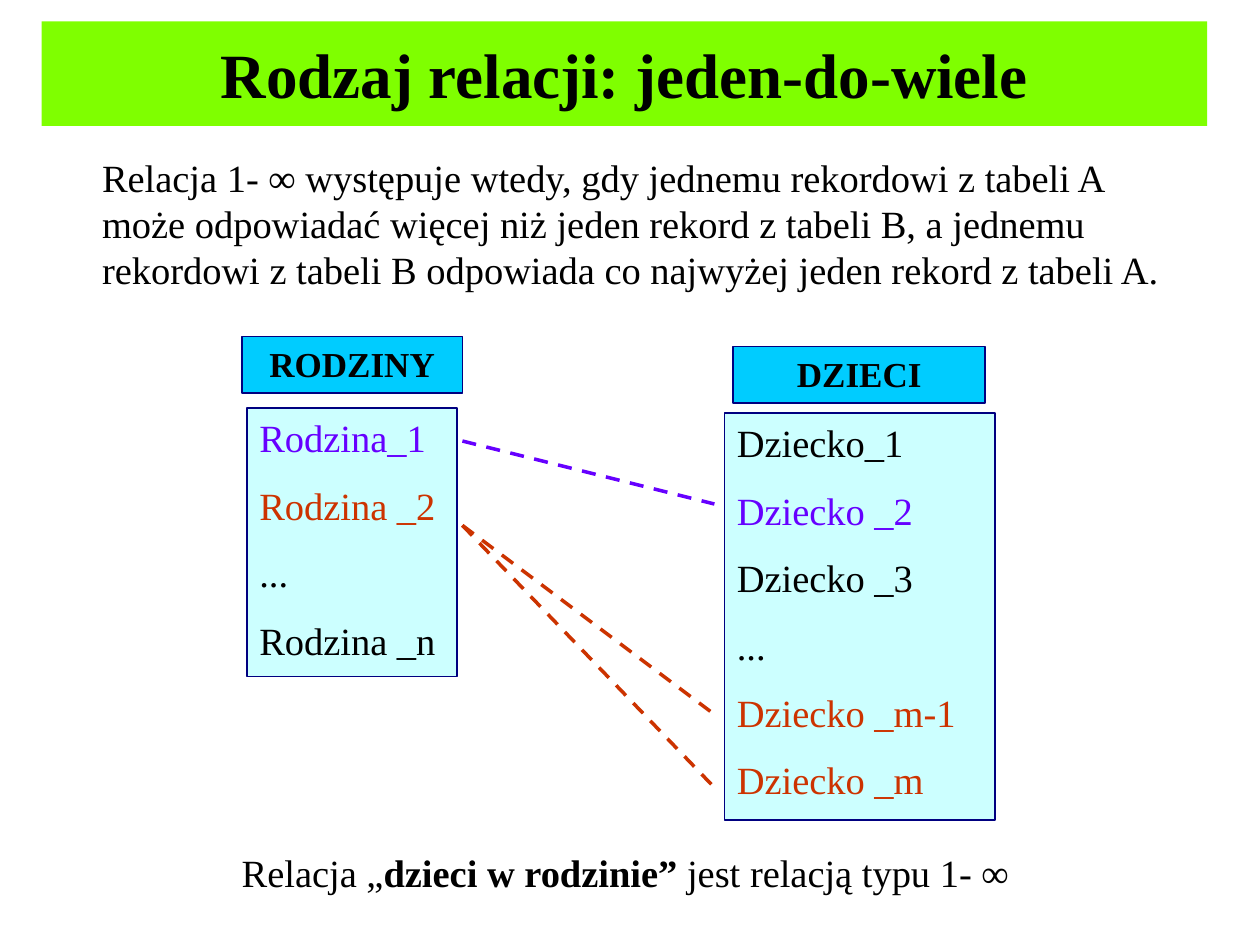
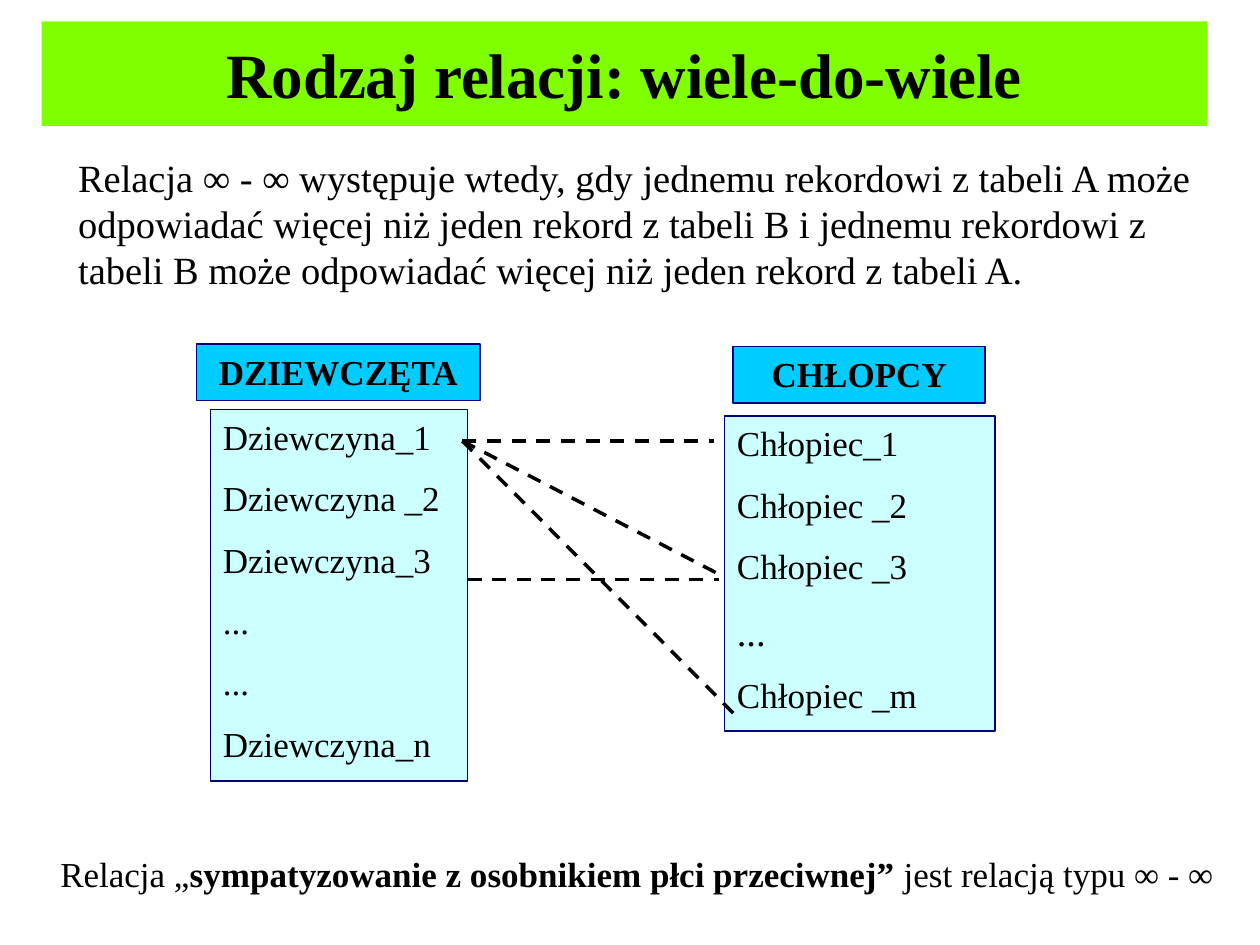
from dataclasses import dataclass
from typing import NamedTuple

from pptx import Presentation
from pptx import util as u
from pptx.dml.color import RGBColor
from pptx.enum import dml, shapes, text
from pptx.oxml import ns, xmlchemy


@dataclass(frozen=True)
class Theme:
    font: str = "Times New Roman"
    ink: str = "000000"
    band: str = "7FFF00"
    header: str = "00CCFF"
    records: str = "CCFFFF"
    border: str = "000080"
    violet: str = "6600FF"
    rust: str = "CC3300"
    title_size: int = 36
    text_size: int = 22
    small_size: int = 20
    record_gap: float = 0.55
    border_width: int = 1
    link_width: int = 2


THEME = Theme()


class Box(NamedTuple):
    left: float
    top: float
    width: float
    height: float


class Record(NamedTuple):
    label: str
    color: str = THEME.ink
    size: int = THEME.text_size


class Entity(NamedTuple):
    name: str
    header_box: Box
    records_box: Box
    records: list[Record]


class Link(NamedTuple):
    start: tuple[float, float]
    end: tuple[float, float]
    color: str = THEME.ink


class Caption(NamedTuple):
    box: Box
    relation: str
    kind: str
    size: int


class Relation(NamedTuple):
    title: str
    definition: str
    definition_box: Box
    entities: list[Entity]
    links: list[Link]
    caption: Caption


TITLE_BOX = Box(0.33, 0.17, 9.25, 0.83)
RIGHT_HEADER_BOX = Box(5.82, 2.75, 2, 0.45)
DEFINITION_INDENT = 0.48


def small_records(*labels: str) -> list[Record]:
    return [Record(label, size=THEME.small_size) for label in labels]


RELATIONS = [
    Relation(
        "Rodzaj relacji: jeden-do-wiele",
        "Relacja 1- ∞ występuje wtedy, gdy jednemu rekordowi z tabeli A może "
        "odpowiadać więcej niż jeden rekord z tabeli B, a jednemu rekordowi z "
        "tabeli B odpowiada co najwyżej jeden rekord z tabeli A.",
        Box(0.33, 1.17, 9.25, 1.25),
        [
            Entity("RODZINY", Box(1.92, 2.67, 1.75, 0.45), Box(1.96, 3.24, 1.67, 2.13), [
                Record("Rodzina_1", THEME.violet),
                Record("Rodzina _2", THEME.rust),
                Record("..."),
                Record("Rodzina _n"),
            ]),
            Entity("DZIECI", RIGHT_HEADER_BOX, Box(5.75, 3.28, 2.15, 3.23), [
                Record("Dziecko_1"),
                Record("Dziecko _2", THEME.violet),
                Record("Dziecko _3"),
                Record("..."),
                Record("Dziecko _m-1", THEME.rust),
                Record("Dziecko _m", THEME.rust),
            ]),
        ],
        [
            Link((3.67, 3.5), (5.67, 4), THEME.violet),
            Link((3.67, 4.17), (5.67, 5.67), THEME.rust),
            Link((3.67, 4.17), (5.67, 6.25), THEME.rust),
        ],
        Caption(Box(1.82, 6.69, 6.31, 0.47), "dzieci w rodzinie”", "1- ∞", THEME.text_size),
    ),
    Relation(
        "Rodzaj relacji: wiele-do-wiele",
        "Relacja ∞ - ∞ występuje wtedy, gdy jednemu rekordowi z tabeli A może "
        "odpowiadać więcej niż jeden rekord z tabeli B i jednemu rekordowi z "
        "tabeli B może odpowiadać więcej niż jeden rekord z tabeli A.",
        Box(0.14, 1.17, 9.75, 1.25),
        [
            Entity("DZIEWCZĘTA", Box(1.56, 2.73, 2.25, 0.45), Box(1.67, 3.25, 2.04, 2.95),
                   small_records("Dziewczyna_1", "Dziewczyna _2", "Dziewczyna_3",
                                 "...", "...", "Dziewczyna_n")),
            Entity("CHŁOPCY", RIGHT_HEADER_BOX, Box(5.75, 3.3, 2.15, 2.5), [
                *small_records("Chłopiec_1", "Chłopiec _2", "Chłopiec _3"),
                Record("..."),
                *small_records("Chłopiec _m"),
            ]),
        ],
        [
            Link((3.67, 3.5), (5.75, 4.58)),
            Link((3.67, 3.5), (5.83, 5.67)),
            Link((3.67, 3.5), (5.67, 3.5)),
            Link((3.71, 4.6), (5.71, 4.6)),
        ],
        Caption(Box(0.38, 6.72, 9.41, 0.44), "sympatyzowanie z osobnikiem płci przeciwnej”",
                "∞ - ∞", THEME.small_size),
    ),
]


def inches(lengths: tuple[float, ...]) -> list[u.Length]:
    return [u.Inches(length) for length in lengths]


def style(paragraph, size: int, color: str = THEME.ink, bold: bool = False) -> None:
    font = paragraph.font
    font.name = THEME.font
    font.size = u.Pt(size)
    font.bold = bold
    font.color.rgb = RGBColor.from_string(color)


def draw_title(slide, title: str) -> None:
    band = slide.shapes.title
    band.left, band.top, band.width, band.height = inches(TITLE_BOX)
    band.fill.solid()
    band.fill.fore_color.rgb = RGBColor.from_string(THEME.band)
    frame = band.text_frame
    frame.text = title
    frame.auto_size = text.MSO_AUTO_SIZE.NONE
    frame.vertical_anchor = text.MSO_ANCHOR.MIDDLE
    heading = frame.paragraphs[0]
    heading.alignment = text.PP_ALIGN.CENTER
    style(heading, THEME.title_size, bold=True)


def draw_definition(slide, relation: Relation) -> None:
    frame = slide.shapes.add_textbox(*inches(relation.definition_box)).text_frame
    frame.word_wrap = True
    frame.margin_left = u.Inches(DEFINITION_INDENT)
    frame.text = relation.definition
    style(frame.paragraphs[0], THEME.text_size)


def draw_panel(slide, box: Box, fill: str):
    panel = slide.shapes.add_shape(shapes.MSO_SHAPE.RECTANGLE, *inches(box))
    panel.shadow.inherit = False
    panel.fill.solid()
    panel.fill.fore_color.rgb = RGBColor.from_string(fill)
    panel.line.color.rgb = RGBColor.from_string(THEME.border)
    panel.line.width = u.Pt(THEME.border_width)
    frame = panel.text_frame
    frame.word_wrap = True
    frame.vertical_anchor = text.MSO_ANCHOR.TOP
    return frame


def draw_entity(slide, entity: Entity) -> None:
    rows = draw_panel(slide, entity.records_box, THEME.records)
    rows.text = "\n".join(record.label for record in entity.records)
    for index, (row, record) in enumerate(zip(rows.paragraphs, entity.records)):
        row.alignment = text.PP_ALIGN.LEFT
        row.space_before = u.Pt(record.size * THEME.record_gap if index else 0)
        style(row, record.size, record.color)

    header = draw_panel(slide, entity.header_box, THEME.header)
    header.text = entity.name
    name = header.paragraphs[0]
    name.alignment = text.PP_ALIGN.CENTER
    style(name, THEME.small_size, bold=True)


def draw_link(slide, link: Link) -> None:
    connector = slide.shapes.add_connector(
        shapes.MSO_CONNECTOR.STRAIGHT, *inches(link.start + link.end))
    connector.line.color.rgb = RGBColor.from_string(link.color)
    connector.line.width = u.Pt(THEME.link_width)
    connector.line.dash_style = dml.MSO_LINE.DASH
    connector._element.spPr.append(xmlchemy.OxmlElement("a:effectLst"))


def draw_caption(slide, caption: Caption) -> None:
    frame = slide.shapes.add_textbox(*inches(caption.box)).text_frame
    frame.word_wrap = False
    sentence = frame.paragraphs[0]
    style(sentence, caption.size)
    for part, bold in (("Relacja „", False), (caption.relation, True),
                       (f" jest relacją typu {caption.kind}", False)):
        run = sentence.add_run()
        run.text = part
        run.font.bold = bold


def draw_relation(slide, relation: Relation) -> None:
    draw_title(slide, relation.title)
    draw_definition(slide, relation)
    draw_caption(slide, relation.caption)
    for entity in relation.entities:
        draw_entity(slide, entity)
    for link in relation.links:
        draw_link(slide, link)


def main() -> None:
    deck = Presentation()
    deck.slide_width, deck.slide_height = inches((10, 7.5))
    title_only = deck.slide_layouts.get_by_name("Title Only")
    for relation in RELATIONS:
        draw_relation(deck.slides.add_slide(title_only), relation)
    deck.save("out.pptx")


if __name__ == "__main__":
    main()
